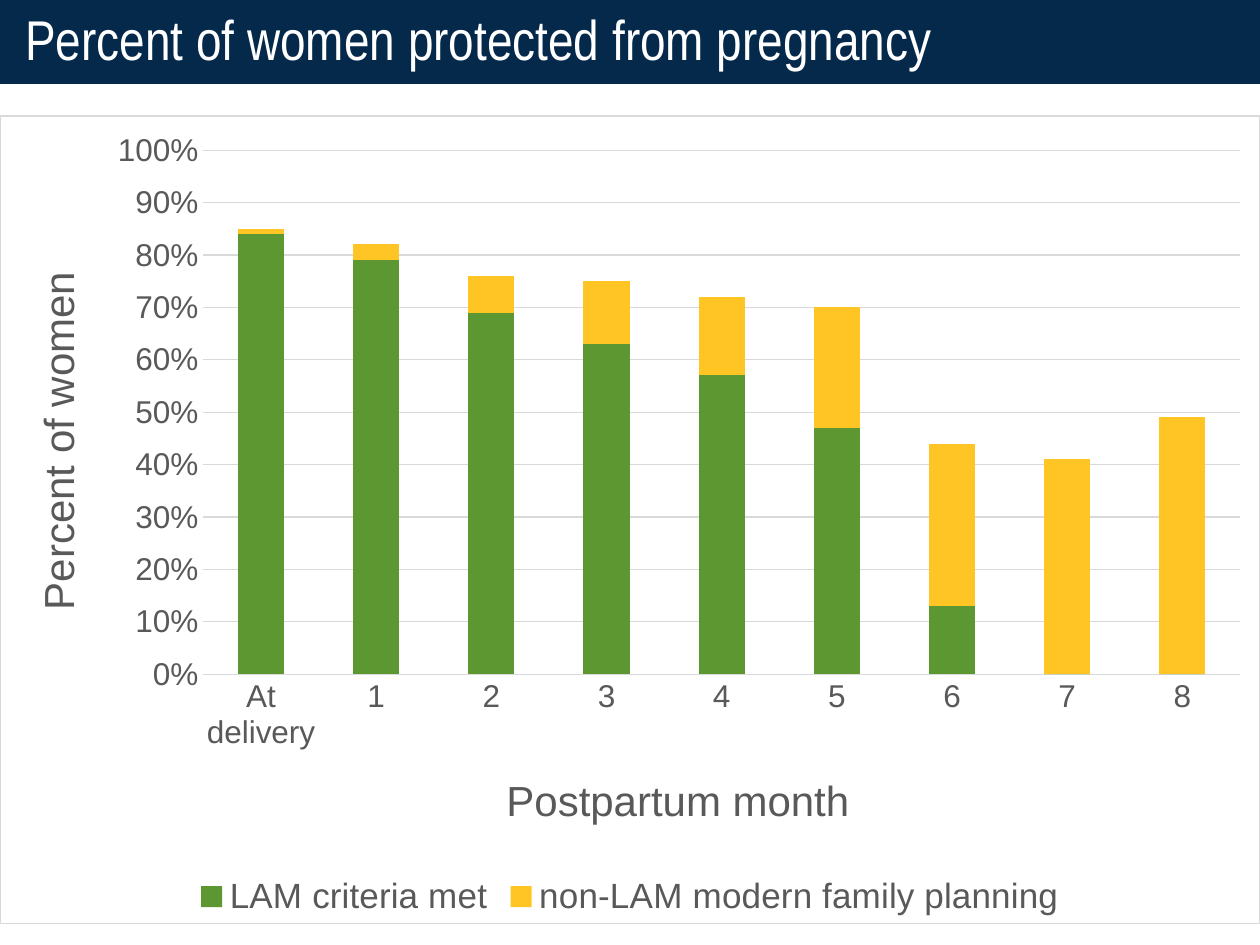
"""Build a slide with a stacked column chart of women protected from pregnancy."""
from dataclasses import dataclass

from lxml import etree
from pptx import Presentation, util as u
from pptx.chart import data as cd
from pptx.dml import color as col
from pptx.enum import chart as ch, shapes, text
from pptx.oxml import ns, parse_xml


@dataclass(frozen=True)
class Theme:
    navy: str = "04294A"
    white: str = "FFFFFF"
    gray: str = "595959"
    rule: str = "D9D9D9"
    green: str = "5D9732"
    gold: str = "FFC525"
    head: int = 32
    title: int = 24
    key: int = 20
    tick: int = 18
    line: float = 0.75
    sans: str = "Arial"
    slim: str = "Arial Narrow"


T = Theme()
WIDE, HIGH = 720, 462


def style(font, size, tone=T.gray, face=T.sans):
    font.name, font.size, font.bold = face, u.Pt(size), False
    font.color.rgb = col.RGBColor.from_string(tone)


def place(node, index, left, top, **extra):
    for old in node.findall(ns.qn("c:layout")):
        node.remove(old)
    layout = etree.Element(ns.qn("c:layout"))
    manual = etree.SubElement(layout, ns.qn("c:manualLayout"))
    sides = dict(xMode="edge", yMode="edge", x=left / WIDE, y=top / HIGH)
    if extra:
        sides = dict(layoutTarget="inner", **sides,
                     w=extra["width"] / WIDE, h=extra["height"] / HIGH)
    for tag, val in sides.items():
        etree.SubElement(manual, ns.qn(f"c:{tag}"), val=str(val))
    node.insert(index, layout)


deck = Presentation()
deck.slide_width, deck.slide_height = u.Pt(WIDE), u.Pt(540)
slide = deck.slides.add_slide(deck.slide_layouts[6])

band = slide.shapes.add_shape(
    shapes.MSO_SHAPE.RECTANGLE, u.Pt(0), u.Pt(0), u.Pt(WIDE), u.Pt(48))
band.shadow.inherit = False
band.fill.solid()
band.fill.fore_color.rgb = col.RGBColor.from_string(T.navy)
band.line.fill.background()
frame = band.text_frame
frame.word_wrap = True
frame.vertical_anchor = text.MSO_ANCHOR.MIDDLE
frame.margin_left = frame.margin_right = u.Pt(14.4)
frame.margin_top = frame.margin_bottom = u.Pt(7.2)
para = frame.paragraphs[0]
para.text = "Percent of women protected from pregnancy"
para.alignment = text.PP_ALIGN.LEFT
para.line_spacing = 0.9
style(para.font, T.head, T.white, T.slim)

data = cd.CategoryChartData(number_format="0%")
data.categories = ["At delivery", *map(str, range(1, 9))]
data.add_series("LAM criteria met",
                [0.84, 0.79, 0.69, 0.63, 0.57, 0.47, 0.13, 0, 0])
data.add_series("non-LAM modern family planning",
                [0.01, 0.03, 0.07, 0.12, 0.15, 0.23, 0.31, 0.41, 0.49])
chart = slide.shapes.add_chart(
    ch.XL_CHART_TYPE.COLUMN_STACKED,
    u.Pt(0), u.Pt(66), u.Pt(WIDE), u.Pt(HIGH), data).chart
chart.has_title = False
style(chart.font, T.tick)
space = chart._chartSpace
space.chart.addnext(parse_xml(
    f'<c:spPr {ns.nsdecls("c", "a")}>'
    f'<a:solidFill><a:srgbClr val="{T.white}"/></a:solidFill>'
    f'<a:ln w="{u.Pt(T.line)}"><a:solidFill><a:srgbClr val="{T.rule}"/>'
    '</a:solidFill></a:ln></c:spPr>'))
place(space.chart.plotArea, 0, 116, 19.5, width=593, height=300)

plot = chart.plots[0]
plot.gap_width, plot.overlap = 150, 100
plot.vary_by_categories = False
for series, tone in zip(plot.series, (T.green, T.gold)):
    series.format.fill.solid()
    series.format.fill.fore_color.rgb = col.RGBColor.from_string(tone)

cat, val = chart.category_axis, chart.value_axis
for axis, name, left, top, turn in (
        (cat, "Postpartum month", 285, 372, 0),
        (val, "Percent of women", 13, 85, -5400000)):
    axis.major_tick_mark = axis.minor_tick_mark = ch.XL_TICK_MARK.NONE
    style(axis.tick_labels.font, T.tick)
    label = axis.axis_title.text_frame
    label.text = name
    label._txBody.bodyPr.set("rot", str(turn))
    style(label.paragraphs[0].font, T.title)
    place(axis.axis_title._element, 1, left, top)

val.minimum_scale, val.maximum_scale, val.major_unit = 0, 1, 0.1
val.tick_labels.number_format = "0%"
val.tick_labels.number_format_is_linked = False
val.format.line.fill.background()
val.has_major_gridlines = True
for line in (cat.format.line, val.major_gridlines.format.line):
    line.width = u.Pt(T.line)
    line.color.rgb = col.RGBColor.from_string(T.rule)

chart.has_legend = True
chart.legend.position = ch.XL_LEGEND_POSITION.BOTTOM
chart.legend.include_in_layout = False
style(chart.legend.font, T.key)

deck.save("out.pptx")
